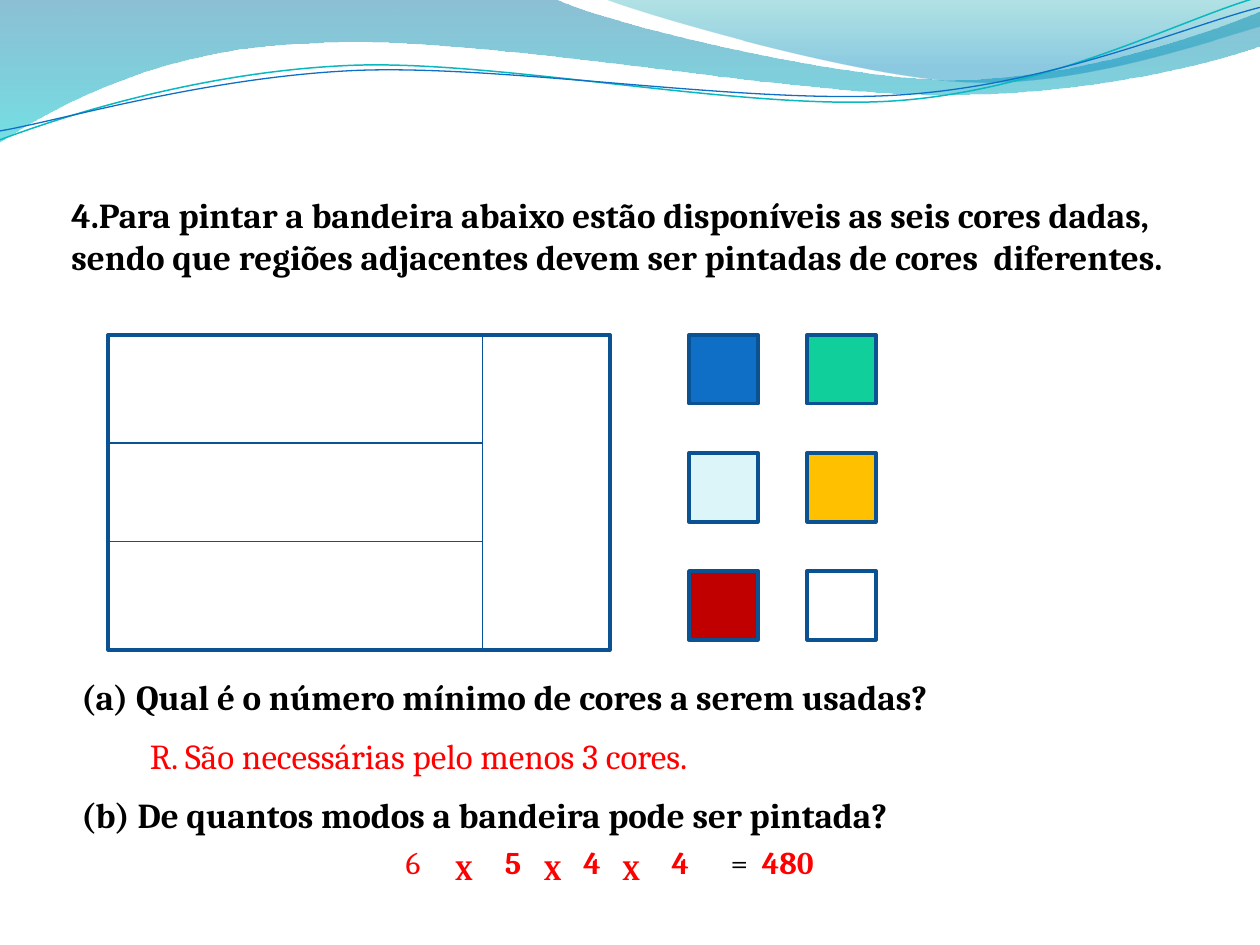
from dataclasses import dataclass

from lxml import etree
from pptx import Presentation
from pptx.dml.color import RGBColor
from pptx.enum.shapes import MSO_CONNECTOR, MSO_SHAPE
from pptx.oxml.ns import qn
from pptx.util import Cm, Pt

RECTANGLE = MSO_SHAPE.RECTANGLE
STRAIGHT = MSO_CONNECTOR.STRAIGHT


@dataclass(frozen=True)
class Theme:
    font: str = "Cambria"
    ink: str = "000000"
    answer: str = "FF0000"
    white: str = "FFFFFF"
    outline: str = "0B5292"
    divider: str = "095295"
    outline_width: float = 2
    divider_width: float = 0.75
    body_size: int = 20
    number_size: int = 18
    times_size: int = 16


THEME = Theme()

WAVES = [
    {"start": (0, 0), "close": True,
     "stops": [(0, "0074A1", 45), (1, "00C6CF", 55)],
     "segments": [
         [(11.18, -0.03)],
         [(12.09, 0.43), (16.87, 1.6), (19.25, 1.6)],
         [(21.67, 1.6), (24.33, 0.66), (25.4, 0.23)],
         [(25.43, 0.91)],
         [(24.97, 1.12), (22.1, 1.93), (18.95, 1.91)],
         [(15.8, 1.91), (9.7, 0.71), (6.53, 0.86)],
         [(3.28, 0.91), (1.17, 2.11), (-0.03, 2.87)]]},
    {"start": (12.17, -0.03), "close": True,
     "stops": [(0, "00A1A9", 30), (0.8, "008BBF", 45)],
     "segments": [
         [(12.93, 0.28), (17.32, 1.57), (19.53, 1.65)],
         [(21.74, 1.75), (24.41, 0.81), (25.4, 0.53)],
         [(25.4, 0)]]},
    {"start": (0, 2.82), "close": False, "line": ("0AB8BF", 0.85),
     "segments": [
         [(1.22, 2.36), (4.01, 1.45), (7.04, 1.32)],
         [(10.03, 1.19), (15.06, 2.26), (18.11, 2.03)],
         [(21.16, 1.8), (23.83, 0.38), (25.35, -0.05)]]},
    {"start": (0, 2.64), "close": False, "line": ("0F6FC6", 0.75),
     "segments": [
         [(1.19, 2.44), (4.17, 1.55), (7.19, 1.42)],
         [(10.24, 1.3), (15.16, 2.13), (18.21, 1.91)],
         [(21.23, 1.7), (23.9, 0.53), (25.4, 0.15)]]},
]

STATEMENT = [
    "4.Para pintar a bandeira abaixo estão disponíveis as seis cores dadas,",
    "sendo que regiões adjacentes devem ser pintadas de cores  diferentes.",
]
QUESTIONS = [
    (1.39, 18.39, "(a) Qual é o número mínimo de cores a serem usadas?", THEME.ink, True),
    (2.77, 12.12, "R. São necessárias pelo menos 3 cores.", THEME.answer, False),
    (1.39, 17.65, "(b) De quantos modos a bandeira pode ser pintada?", THEME.ink, True),
]
FACTORS = [(7.93, "6", False), (9.93, "5", True), (11.51, "4", True), (13.29, "4", True)]
TIMES_LEFTS = [8.93, 10.72, 12.3]
PALETTE = [("0F6FC6", "10CF9B"), ("DBF5F9", "FFC000"), ("C00000", "FFFFFF")]

FLAG_LEFT, FLAG_TOP, FLAG_WIDTH, FLAG_HEIGHT = 2.18, 6.75, 10.12, 6.35
STRIPE_RIGHT = 9.73
STRIPE_EDGES = [8.93, 10.92]
SWATCH_LEFT, SWATCH_SIZE, SWATCH_STEP = 13.89, 1.39, 2.38
QUESTION_TOP, QUESTION_STEP = 13.49, 1.19


def set_line(shape, color, width):
    shape.line.color.rgb = RGBColor.from_string(color)
    shape.line.width = Pt(width)


def set_gradient(shape, stops):
    shape.fill.gradient()
    shape.fill.gradient_angle = 270
    for stop, (position, color, _) in zip(shape.fill.gradient_stops, stops):
        stop.position = position
        stop.color.rgb = RGBColor.from_string(color)
    colors = shape._element.spPr.iter(qn("a:srgbClr"))
    for element, (_, _, opacity) in zip(colors, stops):
        etree.SubElement(element, qn("a:alpha")).set("val", str(opacity * 1000))


def bend_segments(shape, segments):
    straight_lines = list(shape._element.spPr.iter(qn("a:lnTo")))
    for straight_line, controls in zip(straight_lines, segments):
        if len(controls) == 1:
            continue
        curve = etree.Element(qn("a:cubicBezTo"))
        for x, y in controls:
            point = etree.SubElement(curve, qn("a:pt"))
            point.set("x", str(Cm(x) - shape.left))
            point.set("y", str(Cm(y) - shape.top))
        straight_line.getparent().replace(straight_line, curve)


def add_wave(slide, wave):
    anchors = [controls[-1] for controls in wave["segments"]]
    builder = slide.shapes.build_freeform(*map(Cm, wave["start"]))
    builder.add_line_segments([(Cm(x), Cm(y)) for x, y in anchors], close=wave["close"])
    shape = builder.convert_to_shape()
    bend_segments(shape, wave["segments"])
    shape.shadow.inherit = False
    if "stops" in wave:
        set_gradient(shape, wave["stops"])
        shape.line.fill.background()
    else:
        shape.fill.background()
        set_line(shape, *wave["line"])


def add_rectangle(slide, left, top, width, height, color):
    shape = slide.shapes.add_shape(RECTANGLE, Cm(left), Cm(top), Cm(width), Cm(height))
    shape.shadow.inherit = False
    shape.fill.solid()
    shape.fill.fore_color.rgb = RGBColor.from_string(color)
    set_line(shape, THEME.outline, THEME.outline_width)


def add_divider(slide, *ends):
    connector = slide.shapes.add_connector(STRAIGHT, *map(Cm, ends))
    set_line(connector, THEME.divider, THEME.divider_width)
    etree.SubElement(connector._element.spPr, qn("a:effectLst"))


def style_font(font, color, bold):
    font.color.rgb = RGBColor.from_string(color)
    font.bold = bold


def add_text(slide, left, top, width, height, lines, size, color, bold=True):
    frame = slide.shapes.add_textbox(Cm(left), Cm(top), Cm(width), Cm(height)).text_frame
    frame.word_wrap = True
    for index, line in enumerate(lines):
        paragraph = frame.add_paragraph() if index else frame.paragraphs[0]
        paragraph.text = line
        paragraph.font.name = THEME.font
        paragraph.font.size = Pt(size)
        style_font(paragraph.font, color, bold)
    return frame


def add_flag(slide):
    add_rectangle(slide, FLAG_LEFT, FLAG_TOP, FLAG_WIDTH, FLAG_HEIGHT, THEME.white)
    add_divider(slide, STRIPE_RIGHT, FLAG_TOP, STRIPE_RIGHT, FLAG_TOP + FLAG_HEIGHT)
    for edge in STRIPE_EDGES:
        add_divider(slide, FLAG_LEFT, edge, STRIPE_RIGHT, edge)


def add_palette(slide):
    for row, colors in enumerate(PALETTE):
        for column, color in enumerate(colors):
            add_rectangle(slide, SWATCH_LEFT + column * SWATCH_STEP, FLAG_TOP + row * SWATCH_STEP,
                          SWATCH_SIZE, SWATCH_SIZE, color)


def add_product(slide):
    for left, factor, bold in FACTORS:
        add_text(slide, left, 16.87, 0.86, 1.02, [factor], THEME.number_size, THEME.answer, bold)
    result = add_text(slide, 14.48, 16.87, 2.21, 1.02, ["="], THEME.number_size, THEME.ink, False)
    total = result.paragraphs[0].add_run()
    total.text = "  480"
    style_font(total.font, THEME.answer, True)
    for left in TIMES_LEFTS:
        add_text(slide, left, 17.07, 0.91, 0.94, ["X"], THEME.times_size, THEME.answer)


def main():
    presentation = Presentation()
    presentation.slide_width, presentation.slide_height = Cm(25.4), Cm(19.05)
    slide = presentation.slides.add_slide(presentation.slide_layouts[6])
    for wave in WAVES:
        add_wave(slide, wave)
    add_text(slide, 1.19, 3.77, 23.6, 1.96, STATEMENT, THEME.body_size, THEME.ink)
    add_flag(slide)
    add_palette(slide)
    for row, (left, width, text, color, bold) in enumerate(QUESTIONS):
        add_text(slide, left, QUESTION_TOP + row * QUESTION_STEP, width, 1.12, [text],
                 THEME.body_size, color, bold)
    add_product(slide)
    presentation.save("out.pptx")


if __name__ == "__main__":
    main()
